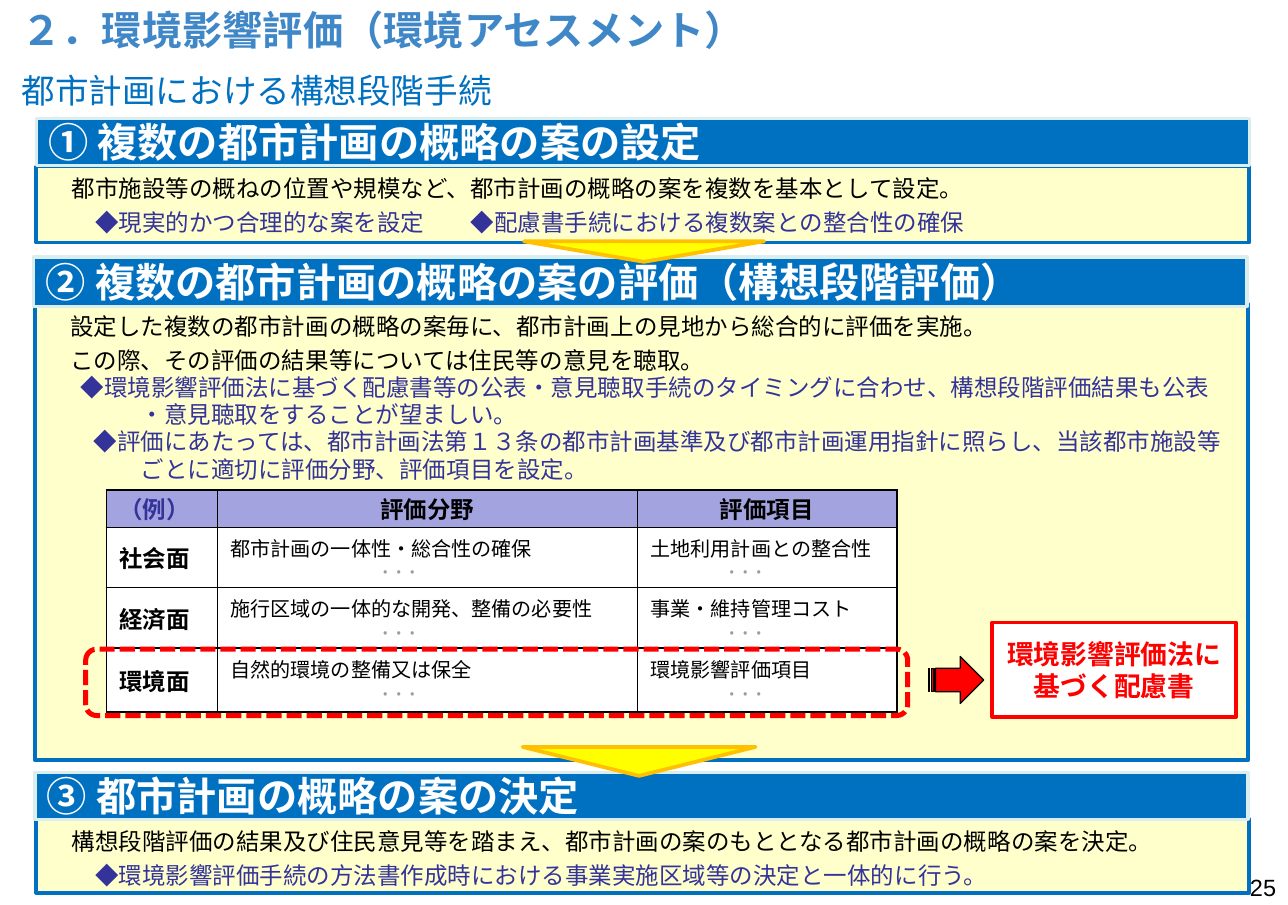
from lxml.etree import SubElement
from pptx import Presentation
from pptx.dml.color import RGBColor
from pptx.enum.dml import MSO_LINE
from pptx.enum.shapes import MSO_SHAPE
from pptx.enum.text import MSO_ANCHOR, PP_ALIGN
from pptx.oxml.ns import qn
from pptx.util import Inches, Pt

COLUMNS, ROWS = 106.7, 75
CELL = Inches(0.1)
BLUE, CREAM, NAVY, RED = "0070C0", "FFFFCC", "333399", "FF0000"
BLACK, WHITE, LILAC, GREY = "000000", "FFFFFF", "A3A3E0", "9C9C9C"
BODY_SIZE = 14


def color(hex_string):
    return RGBColor.from_string(hex_string)


def apply(target, values):
    for name, value in values.items():
        setattr(target, name, value)


def grid(*lengths):
    return [round(length * CELL) for length in lengths]


class SlideBuilder:
    japanese_font = "Noto Sans CJK JP"

    def __init__(self, presentation):
        apply(presentation, {"slide_width": round(COLUMNS * CELL), "slide_height": ROWS * CELL})
        self.slide = presentation.slides.add_slide(presentation.slide_layouts[6])

    def add_text(self, paragraph, text, size, ink, bold=False, font=None, **layout):
        run = paragraph.add_run()
        run.text = text
        apply(run.font, {"size": Pt(size), "bold": bold, "name": font or self.japanese_font})
        run.font.color.rgb = color(ink)
        SubElement(run._r.get_or_add_rPr(), qn("a:ea"), typeface=self.japanese_font)
        apply(paragraph, {"alignment": PP_ALIGN.LEFT, **layout})

    def frame(self, shape, anchor=MSO_ANCHOR.MIDDLE, side=1, top=0.5, wrap=True):
        horizontal, vertical = grid(side, top)
        apply(shape.text_frame, {
            "word_wrap": wrap, "vertical_anchor": anchor,
            "margin_left": horizontal, "margin_right": horizontal,
            "margin_top": vertical, "margin_bottom": vertical,
        })
        return shape.text_frame

    def shape(self, kind, box, fill, line, width, adjustments=(), dash=None):
        shape = self.slide.shapes.add_shape(kind, *grid(*box))
        shape.shadow.inherit = False
        if fill:
            shape.fill.solid()
            shape.fill.fore_color.rgb = color(fill)
        else:
            shape.fill.background()
        shape.line.color.rgb = color(line)
        shape.line.width = Pt(width)
        if dash:
            shape.line.dash_style = dash
        for index, value in enumerate(adjustments):
            shape.adjustments[index] = value
        return shape

    def label(self, box, text, size, ink, frame=None, **style):
        shape = self.slide.shapes.add_textbox(*grid(*box))
        self.add_text(self.frame(shape, **(frame or {})).paragraphs[0], text, size, ink, **style)

    def panel(self, box, lines):
        shape = self.shape(MSO_SHAPE.RECTANGLE, box, CREAM, BLUE, 2.25)
        text_frame = self.frame(shape, MSO_ANCHOR.TOP)
        for index, (indent, pitch, ink, text) in enumerate(lines):
            paragraph = text_frame.add_paragraph() if index else text_frame.paragraphs[0]
            properties = paragraph._p.get_or_add_pPr()
            properties.set("marL", "0")
            properties.set("indent", str(Pt(indent * BODY_SIZE)))
            if "\t" in text:
                tabs = SubElement(properties, qn("a:tabLst"))
                SubElement(tabs, qn("a:tab"), pos=str(Pt(20 * BODY_SIZE)), algn="l")
            self.add_text(paragraph, text, BODY_SIZE, ink, line_spacing=Pt(pitch),
                          space_before=Pt(2 if index and pitch == 18 else 0))

    def header(self, box, text):
        shape = self.shape(MSO_SHAPE.RECTANGLE, box, BLUE, "DAEDEF", 2)
        self.add_text(self.frame(shape, top=0).paragraphs[0], text, 24, WHITE, bold=True)

    def callout(self, box, text):
        shape = self.shape(MSO_SHAPE.RECTANGLE, box, WHITE, RED, 2.25)
        self.add_text(self.frame(shape).paragraphs[0], text, 16, RED, bold=True,
                      alignment=PP_ALIGN.CENTER, line_spacing=Pt(19.2))

    def step_arrow(self, box):
        self.shape(MSO_SHAPE.DOWN_ARROW, box, "FFFF00", "FFC000", 2.25, (0.5, 1))

    def border(self, cell):
        properties = cell._tc.get_or_add_tcPr()
        for index, side in enumerate(("lnL", "lnR", "lnT", "lnB")):
            line = properties.makeelement(qn(f"a:{side}"), {"w": str(Pt(1))})
            fill = SubElement(line, qn("a:solidFill"))
            SubElement(fill, qn("a:srgbClr"), val=BLACK)
            properties.insert(index, line)

    def table(self, box, widths, heights, rows):
        table = self.slide.shapes.add_table(len(heights), len(widths), *grid(*box)).table
        apply(table, {"first_row": False, "horz_banding": False})
        for column, width in zip(table.columns, grid(*widths)):
            column.width = width
        for row, height in zip(table.rows, grid(*heights)):
            row.height = height
        for row, texts in enumerate(rows):
            for column, text in enumerate(texts):
                cell = table.cell(row, column)
                heading = row == 0 or column == 0
                side, top = grid(1.1, 0.5 if row else 0)
                apply(cell, {
                    "margin_left": side, "margin_right": side,
                    "margin_top": top, "margin_bottom": top,
                    "vertical_anchor": MSO_ANCHOR.MIDDLE if heading else MSO_ANCHOR.TOP,
                })
                cell.fill.solid()
                cell.fill.fore_color.rgb = color(WHITE if row else LILAC)
                self.border(cell)
                centred = row == 0 and column > 0
                self.add_text(cell.text_frame.paragraphs[0], text, 14 if heading else 12,
                              NAVY if row == column == 0 else BLACK, heading, "Arial",
                              alignment=PP_ALIGN.CENTER if centred else PP_ALIGN.LEFT)


def main():
    presentation = Presentation()
    builder = SlideBuilder(presentation)

    builder.panel((3, 13.8, 100.5, 6.3), [
        (1, 18, BLACK, "都市施設等の概ねの位置や規模など、都市計画の概略の案を複数を基本として設定。"),
        (2, 18, NAVY, "◆現実的かつ合理的な案を設定\t◆配慮書手続における複数案との整合性の確保"),
    ])
    builder.header((3, 9.8, 100.5, 3.9), "① 複数の都市計画の概略の案の設定")
    builder.panel((2.9, 25.2, 100.5, 37.8), [
        (1, 18, BLACK, "設定した複数の都市計画の概略の案毎に、都市計画上の見地から総合的に評価を実施。"),
        (1, 18, BLACK, "この際、その評価の結果等については住民等の意見を聴取。"),
        (1.44, 16.3, NAVY, "◆環境影響評価法に基づく配慮書等の公表・意見聴取手続のタイミングに合わせ、構想段階評価結果も公表"),
        (4, 16.3, NAVY, "・意見聴取をすることが望ましい。"),
        (2, 16.3, NAVY, "◆評価にあたっては、都市計画法第１３条の都市計画基準及び都市計画運用指針に照らし、当該都市施設等"),
        (4, 16.3, NAVY, "ごとに適切に評価分野、評価項目を設定。"),
    ])
    builder.header((2.8, 21.3, 100.5, 4.1), "② 複数の都市計画の概略の案の評価（構想段階評価）")
    builder.step_arrow((43.4, 20, 19.9, 1.7))
    builder.panel((3, 67.9, 100.5, 6.1), [
        (1, 18, BLACK, "構想段階評価の結果及び住民意見等を踏まえ、都市計画の案のもととなる都市計画の概略の案を決定。"),
        (2, 18, NAVY, "◆環境影響評価手続の方法書作成時における事業実施区域等の決定と一体的に行う。"),
    ])
    builder.callout((82.2, 51.6, 20.2, 7.8), "環境影響評価法に基づく配慮書")

    builder.table((8.8, 40.6, 65.5, 18.4), (9.2, 34.8, 21.5), (3.1, 5, 5, 5.3), [
        ("（例）", "評価分野", "評価項目"),
        ("社会面", "都市計画の一体性・総合性の確保", "土地利用計画との整合性"),
        ("経済面", "施行区域の一体的な開発、整備の必要性", "事業・維持管理コスト"),
        ("環境面", "自然的環境の整備又は保全", "環境影響評価項目"),
    ])
    for row in range(3):
        for left in (31.1, 59.8):
            builder.label((left, 46.2 + 5.05 * row, 3.9, 2.4), "・・・", 8, GREY,
                          {"side": 0, "top": 0, "wrap": False},
                          bold=True, font="Arial", alignment=PP_ALIGN.CENTER)
    builder.shape(MSO_SHAPE.ROUNDED_RECTANGLE, (7.1, 53.8, 68.1, 5.5), None, RED, 3,
                  dash=MSO_LINE.SQUARE_DOT)
    builder.header((2.9, 64, 100.5, 3.9), "③ 都市計画の概略の案の決定")
    builder.shape(MSO_SHAPE.STRIPED_RIGHT_ARROW, (76.9, 54.4, 4.6, 3.9), RED, BLACK, 0.75)

    builder.label((0.8, -0.2, 76.6, 5.2), "２．環境影響評価（環境アセスメント）", 24, "4087C8", bold=True)
    builder.label((84.5, 72.2, 22.2, 2.6), "25", 14, BLACK, {"top": 0},
                  font="Arial", alignment=PP_ALIGN.RIGHT)
    builder.label((0.8, 5.3, 73.8, 5.2), "都市計画における構想段階手続", 20, BLUE,
                  {"anchor": MSO_ANCHOR.TOP})
    builder.step_arrow((43.3, 61.9, 19.3, 2.4))
    presentation.save("out.pptx")


if __name__ == "__main__":
    main()
